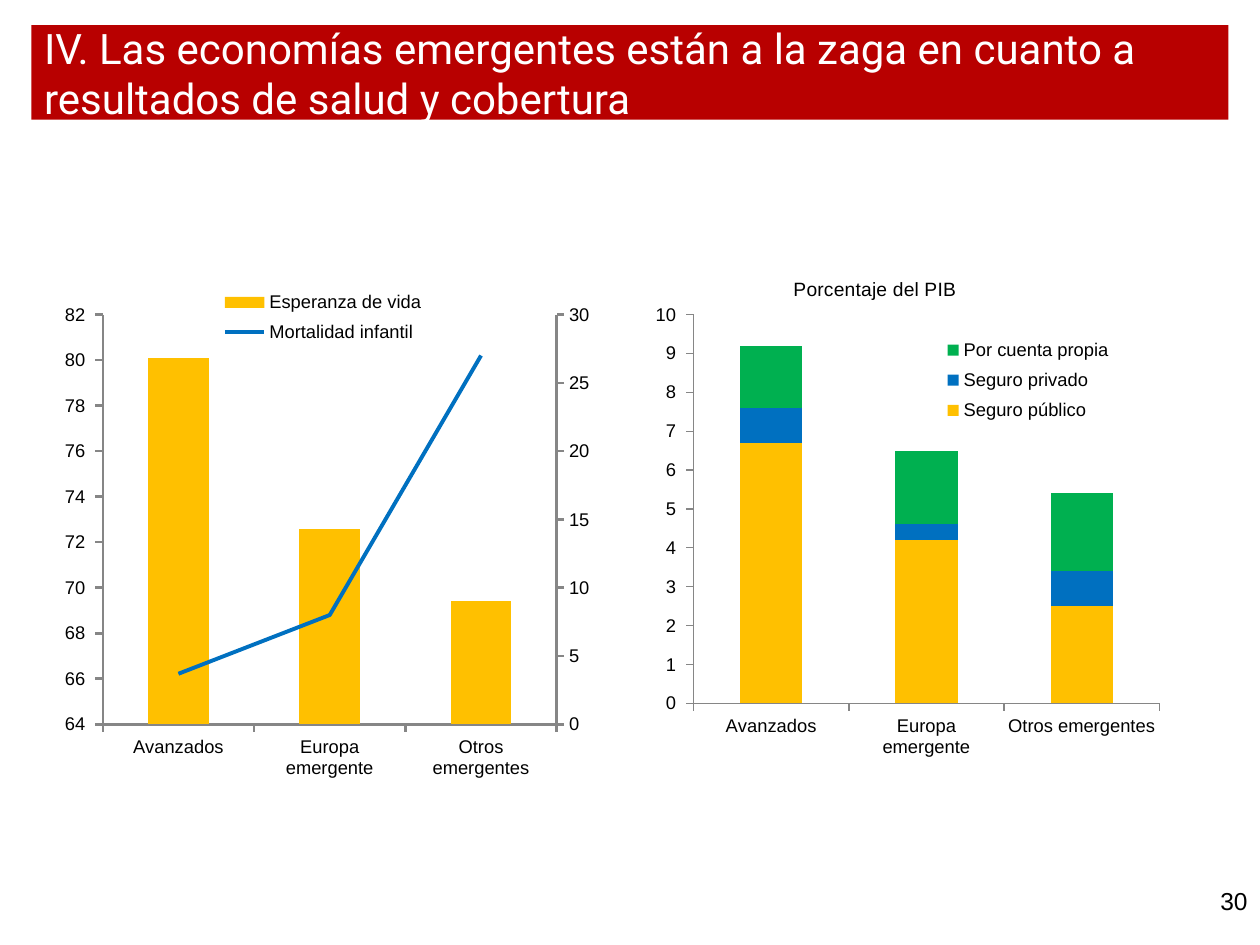
from copy import deepcopy

from lxml import etree
from pptx import Presentation
from pptx import util as u
from pptx.chart.data import CategoryChartData
from pptx.dml.color import RGBColor
from pptx.enum import chart as ch, shapes, text
from pptx.oxml.ns import qn

COLORS = {"red": "B80000", "white": "FFFFFF", "black": "000000", "axis": "868686",
          "yellow": "FFC000", "blue": "0070C0", "green": "00B050"}
GROUPS = ["Avanzados", "Europa emergente", "Otros emergentes"]
NUMBER_FORMAT = r"#,##0_);\(#,##0\)"


def style(font, size, color, name="Arial"):
    settings = {"size": u.Pt(size), "name": name, "bold": False}
    for key, value in settings.items():
        setattr(font, key, value)
    font.color.rgb = RGBColor.from_string(COLORS[color])


def place(parent, before, box, inner=False):
    for old in parent.findall(qn("c:layout")):
        parent.remove(old)
    layout = etree.Element(qn("c:layout"))
    manual = etree.SubElement(layout, qn("c:manualLayout"))
    values = {"layoutTarget": "inner"} if inner else {}
    values.update(xMode="edge", yMode="edge")
    values.update(zip("xywh", box))
    for tag, value in values.items():
        etree.SubElement(manual, qn(f"c:{tag}")).set("val", str(value))
    before.addprevious(layout)


prs = Presentation()
prs.slide_width, prs.slide_height = u.Inches(10), u.Inches(7.5)
slide = prs.slides.add_slide(prs.slide_layouts[5])

heading = slide.shapes.title
banner = slide.shapes.add_shape(shapes.MSO_SHAPE.RECTANGLE, u.Inches(0.25), u.Inches(0.2),
                                u.Inches(9.5), u.Inches(0.75))
banner.shadow.inherit = False
banner.fill.solid()
banner.fill.fore_color.rgb = RGBColor.from_string(COLORS["red"])
banner.line.fill.background()
heading._element.addprevious(banner._element)

heading_box = {"left": 0.25, "top": -0.05, "width": 9.5, "height": 1.25}
for side, inches in heading_box.items():
    setattr(heading, side, u.Inches(inches))
heading.text_frame.text = ("IV. Las economías emergentes están a la zaga en cuanto a "
                           "resultados de salud y cobertura")
heading_frame = {"word_wrap": True, "auto_size": text.MSO_AUTO_SIZE.NONE,
                 "vertical_anchor": text.MSO_ANCHOR.MIDDLE}
for key, value in heading_frame.items():
    setattr(heading.text_frame, key, value)
heading_line = heading.text_frame.paragraphs[0]
heading_line.alignment = text.PP_ALIGN.LEFT
style(heading_line.runs[0].font, 24, "white", "Roboto")

page = slide.shapes.add_textbox(u.Inches(7.67), u.Inches(6.98), u.Inches(2.33), u.Inches(0.52))
page.text_frame.word_wrap = True
page_line = page.text_frame.paragraphs[0]
page_line.text = "30"
page_line.alignment = text.PP_ALIGN.RIGHT
style(page_line.runs[0].font, 14, "black")

panels = [
    {"type": ch.XL_CHART_TYPE.COLUMN_CLUSTERED, "left": 0.5, "width": 4.22,
     "scale": (64, 82, 2), "axis": 1.5, "plot": (0.075, 0.1, 0.855, 0.78),
     "legend": (0.29, 0.04, 0.4, 0.13), "title": None, "overlap": 0,
     "series": [("Esperanza de vida", (80.1, 72.6, 69.4), "yellow"),
                ("Mortalidad infantil", (3.7, 8, 27), "blue")]},
    {"type": ch.XL_CHART_TYPE.COLUMN_STACKED, "left": 5.08, "width": 4.25,
     "scale": (0, 10, 1), "axis": 0.75, "plot": (0.1, 0.1, 0.87, 0.74),
     "legend": (0.55, 0.13, 0.35, 0.19), "title": "Porcentaje del PIB", "overlap": 100,
     "series": [("Seguro público", (6.7, 4.2, 2.5), "yellow"),
                ("Seguro privado", (0.9, 0.4, 0.9), "blue"),
                ("Por cuenta propia", (1.6, 1.9, 2), "green")]},
]
charts = []
for panel in panels:
    data = CategoryChartData()
    data.categories = GROUPS
    for name, values, _ in panel["series"]:
        data.add_series(name, values)
    chart = slide.shapes.add_chart(panel["type"], u.Inches(panel["left"]), u.Inches(2.08),
                                   u.Inches(panel["width"]), u.Inches(4.17), data).chart
    charts.append(chart)
    style(chart.font, 10.5, "black")
    chart.has_title = panel["title"] is not None
    if chart.has_title:
        chart.chart_title.text_frame.text = panel["title"]
        style(chart.chart_title.text_frame.paragraphs[0].runs[0].font, 11, "black")
        chart.chart_title.include_in_layout = True
        title_xml = chart.chart_title._element
        place(title_xml, title_xml.find(qn("c:overlay")), (0.28, 0.02))
    bars = chart.plots[0]
    bars.vary_by_categories = False
    bars.gap_width, bars.overlap = 150, panel["overlap"]
    for series, (_, _, color) in zip(bars.series, panel["series"]):
        series.format.fill.solid()
        series.format.fill.fore_color.rgb = RGBColor.from_string(COLORS[color])

    low, high, step = panel["scale"]
    value_format = {"minimum_scale": low, "maximum_scale": high, "major_unit": step,
                    "has_major_gridlines": False}
    for key, value in value_format.items():
        setattr(chart.value_axis, key, value)
    chart.value_axis.tick_labels.number_format = NUMBER_FORMAT
    chart.value_axis.tick_labels.number_format_is_linked = False
    for axis in (chart.category_axis, chart.value_axis):
        axis.major_tick_mark = ch.XL_TICK_MARK.OUTSIDE
        axis.format.line.color.rgb = RGBColor.from_string(COLORS["axis"])
        axis.format.line.width = u.Pt(panel["axis"])

    chart.has_legend = True
    legend_format = {"position": ch.XL_LEGEND_POSITION.RIGHT, "include_in_layout": True}
    for key, value in legend_format.items():
        setattr(chart.legend, key, value)
    style(chart.legend.font, 10.5, "black")
    legend_xml = chart.legend._element
    place(legend_xml, legend_xml.find(qn("c:overlay")), panel["legend"])
    bars_xml = bars._element
    place(bars_xml.getparent(), bars_xml.getparent()[0], panel["plot"], inner=True) \
        if bars_xml.getparent()[0].tag != qn("c:layout") else \
        place(bars_xml.getparent(), bars_xml, panel["plot"], inner=True)

health = charts[0]
mortality = health.plots[0].series[1]
mortality.format.fill.background()
mortality.format.line.color.rgb = RGBColor.from_string(COLORS["blue"])
mortality.format.line.width = u.Pt(2.25)
mortality_xml = mortality._element
for bar_only in mortality_xml.findall(qn("c:invertIfNegative")):
    mortality_xml.remove(bar_only)
marker = etree.Element(qn("c:marker"))
etree.SubElement(marker, qn("c:symbol")).set("val", "none")
mortality.format.line._get_or_add_ln().getparent().addnext(marker)
etree.SubElement(mortality_xml, qn("c:smooth")).set("val", "0")

columns_xml = health.plots[0]._element
line_xml = etree.Element(qn("c:lineChart"))
columns_xml.addnext(line_xml)
etree.SubElement(line_xml, qn("c:grouping")).set("val", "standard")
etree.SubElement(line_xml, qn("c:varyColors")).set("val", "0")
line_xml.append(mortality_xml)
etree.SubElement(line_xml, qn("c:marker")).set("val", "1")
for axis_id in ("5001", "5002"):
    etree.SubElement(line_xml, qn("c:axId")).set("val", axis_id)

left_xml = health.value_axis._element
right_xml = deepcopy(left_xml)
hidden_xml = deepcopy(health.category_axis._element)
left_xml.addnext(right_xml)
right_xml.addnext(hidden_xml)
edits = [(hidden_xml, {"axId": "5001", "crossAx": "5002", "delete": "1"}),
         (right_xml, {"axId": "5002", "crossAx": "5001", "axPos": "r", "crosses": "max",
                      "scaling/c:max": "30", "scaling/c:min": "0", "majorUnit": "5"})]
namespaces = {"c": "http://schemas.openxmlformats.org/drawingml/2006/chart"}
for axis_xml, values in edits:
    for tag, value in values.items():
        axis_xml.find(f"c:{tag}", namespaces).set("val", value)

prs.save("out.pptx")
